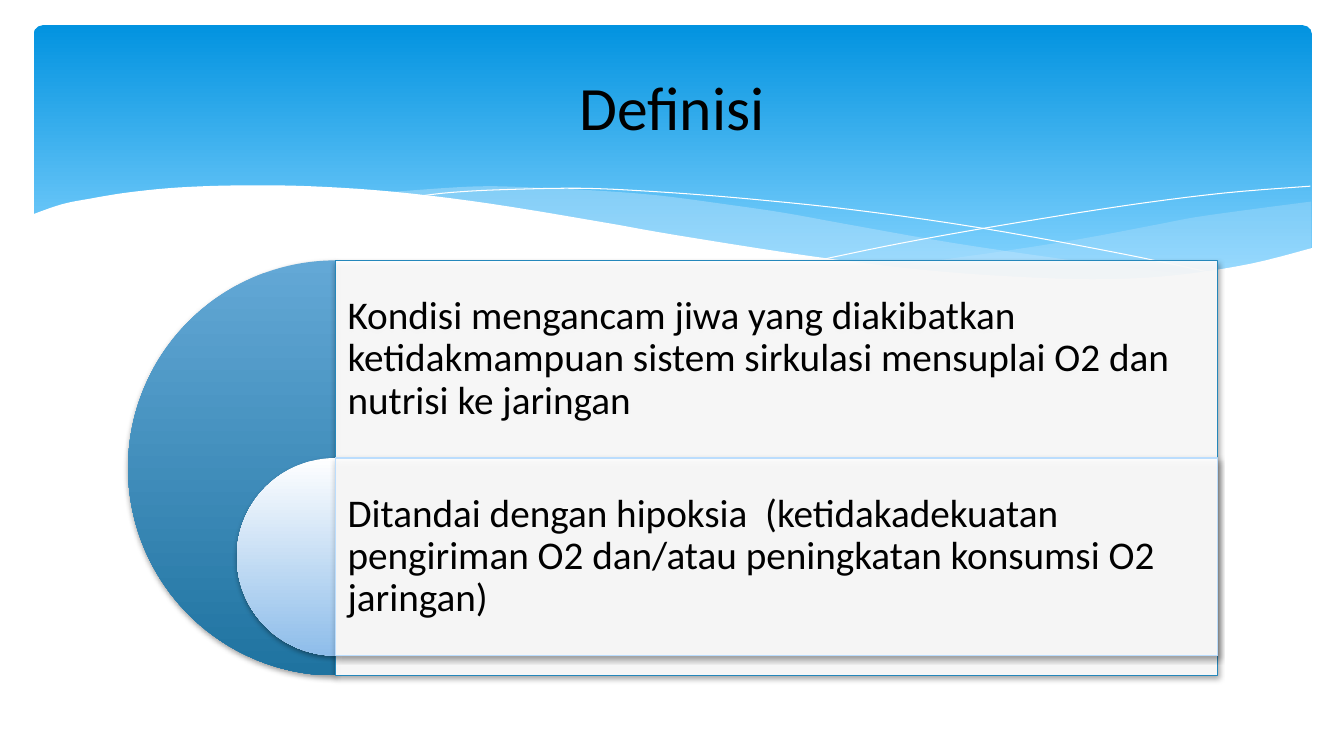
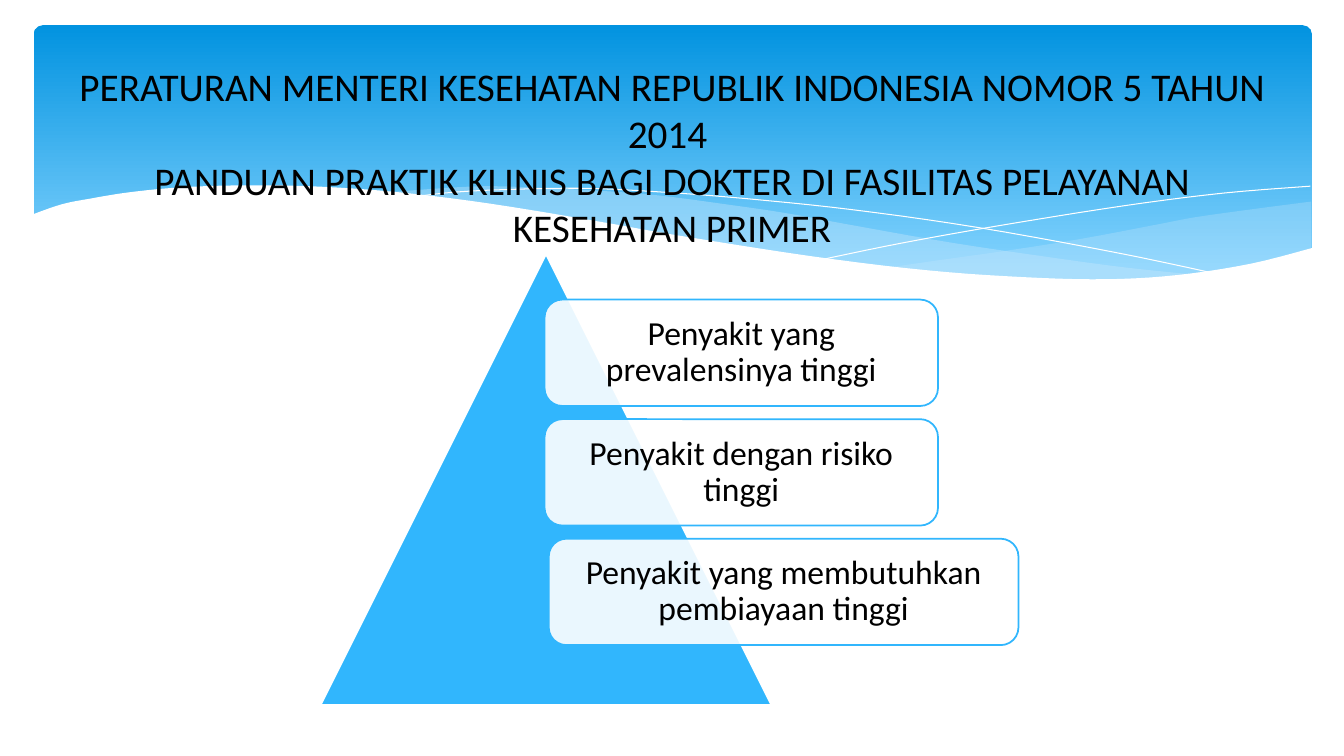
from itertools import pairwise
from typing import NamedTuple

from lxml.etree import SubElement
from pptx import Presentation
from pptx.dml.color import RGBColor
from pptx.enum.shapes import MSO_SHAPE
from pptx.enum.text import MSO_ANCHOR, MSO_AUTO_SIZE, PP_ALIGN
from pptx.oxml.ns import qn
from pptx.util import Pt

FONT = "Calibri"
BLACK = "000000"
WHITE = "FFFFFF"
SKY = "31B6FD"
MIST = "C6E7FC"
BAND_STOPS = ((0, "0293E0"), (0.9, "83D3FE"))

RIGHT_WAVE = (
    ((936.5, 144), (898, 149), (855, 155), (826, 160.5), (773, 170.5),
     (723, 178.5), (677, 185), (635, 191)),
    ((635, 191), (677, 195), (715, 198), (760, 199.5), (811, 199.5),
     (854, 196), (891, 189.5), (936.5, 178)),
)
MIDDLE_WAVE = (
    ((857, 196.5), (803.5, 191), (744.5, 183), (677.5, 173), (604, 160),
     (560, 152), (519, 146), (469.5, 139.5), (424, 136), (383, 134),
     (347, 133), (315, 134.5), (275, 137.5)),
    ((275, 137.5), (328, 143.5), (388, 152), (431, 160), (508, 173),
     (577.5, 183.5), (639, 191.5), (693, 197), (742, 199.5), (785, 200),
     (823, 199), (857, 196.5)),
)
FALLING_LINE = (
    ((296.5, 140.5), (322, 137.5), (359, 135.5), (415, 134.5), (469.5, 137),
     (534, 142), (610.5, 150), (698.5, 162.5), (797.5, 180.5), (871, 196)),
)
RISING_LINE = (
    ((589, 185), (645, 173.5), (718, 160.5), (803, 147), (873.5, 138),
     (936, 133)),
)
WHITE_WAVE = (
    ((938, 177), (893, 188.5), (841, 196.5), (790, 199.5), (731, 198),
     (661, 193), (579, 183), (483, 168), (429, 158.5), (350, 145.5),
     (281, 137), (220, 133), (169, 132.5), (127, 134), (91.5, 137.5),
     (64, 142), (44, 146), (22.5, 153.5)),
    ((22.5, 237), (938, 237)),
)


class Box(NamedTuple):
    """A rectangle in points."""
    left: float
    top: float
    width: float
    height: float


def color(hex_code):
    """Turn a hex string into a colour."""
    return RGBColor.from_string(hex_code)


def lengths(box):
    """Convert a box to lengths."""
    return [Pt(value) for value in box]


def paint_line(shape, line=None, width=0):
    """Set or hide the outline and drop the theme shadow."""
    shape.shadow.inherit = False
    if line:
        shape.line.color.rgb = color(line)
        shape.line.width = Pt(width)
    else:
        shape.line.fill.background()


def paint_solid(shape, fill, opacity=100):
    """Fill a shape with one colour at an opacity in percent."""
    shape.fill.solid()
    shape.fill.fore_color.rgb = color(fill)
    if opacity < 100:
        tint = shape.element.spPr.find(qn("a:solidFill")).find(qn("a:srgbClr"))
        SubElement(tint, qn("a:alpha"), val=str(opacity * 1000))


def paint_gradient(shape, stops):
    """Fill a shape with a gradient from top to bottom."""
    shape.fill.gradient()
    shape.fill.gradient_angle = 270
    for stop, (position, hex_code) in zip(shape.fill.gradient_stops, stops):
        stop.position = position
        stop.color.rgb = color(hex_code)


def cast_shadow(shape):
    """Add a soft shadow straight below a shape."""
    effects = shape.element.spPr.find(qn("a:effectLst"))
    shadow = SubElement(effects, qn("a:outerShdw"), blurRad=str(Pt(4)),
                        dist=str(Pt(2)), dir="5400000", rotWithShape="0")
    tint = SubElement(shadow, qn("a:srgbClr"), val=BLACK)
    SubElement(tint, qn("a:alpha"), val="38000")


def write(shape, text, size, align, spacing=1.0):
    """Set one paragraph of vertically centred text."""
    frame = shape.text_frame
    frame.text = text
    frame.word_wrap = True
    frame.auto_size = MSO_AUTO_SIZE.NONE
    frame.vertical_anchor = MSO_ANCHOR.MIDDLE
    para = frame.paragraphs[0]
    para.alignment = align
    para.line_spacing = spacing
    for span in para.runs:
        span.font.name = FONT
        span.font.size = Pt(size)
        span.font.color.rgb = color(BLACK)


def set_insets(shape, inset, bottom=None):
    """Set the text insets, with an optional deeper bottom one."""
    frame = shape.text_frame
    frame.margin_left = frame.margin_right = frame.margin_top = Pt(inset)
    frame.margin_bottom = Pt(inset if bottom is None else bottom)


def smooth(points, steps=5):
    """Interpolate a Catmull-Rom curve through the points."""
    if len(points) < 3:
        return list(points)
    padded = [points[0], *points, points[-1]]
    curve = [points[0]]
    for index, _ in enumerate(pairwise(points)):
        corners = padded[index:index + 4]
        for step in range(1, steps + 1):
            t = step / steps
            curve.append(tuple(
                0.5 * (2 * b + (c - a) * t + (2 * a - 5 * b + 4 * c - d) * t ** 2
                       + (3 * b - a - 3 * c + d) * t ** 3)
                for a, b, c, d in zip(*corners)))
    return curve


def add_curve(page, box, edges, closed):
    """Draw smooth edges one after another as a single outline."""
    points = [(Pt(box.left + x), Pt(box.top + y))
              for edge in edges for x, y in smooth(edge)]
    builder = page.shapes.build_freeform(*points[0])
    builder.add_line_segments(points[1:], close=closed)
    return builder.convert_to_shape()


def add_band(page, layout, box):
    """Draw the wavy header band and move it into the layout."""
    band = page.shapes.add_shape(
        MSO_SHAPE.ROUNDED_RECTANGLE,
        *lengths(Box(box.left + 24, box.top + 18, box.width - 47, 194.5)))
    band.adjustments[0] = 0.034
    paint_gradient(band, BAND_STOPS)
    paint_line(band)
    parts = [band]
    for edges, fill, opacity in ((RIGHT_WAVE, MIST, 29), (MIDDLE_WAVE, MIST, 40),
                                 (FALLING_LINE, None, 0), (RISING_LINE, None, 0),
                                 (WHITE_WAVE, WHITE, 100)):
        curve = add_curve(page, box, edges, closed=fill is not None)
        if fill:
            paint_solid(curve, fill, opacity)
            paint_line(curve)
        else:
            curve.fill.background()
            paint_line(curve, WHITE)
        parts.append(curve)
    for index, part in enumerate(parts):
        part.element.nvSpPr.cNvPr.set("id", str(100 + index))
        layout.element.cSld.spTree.insert(2 + index, part.element)


def set_title(page, text, size, box):
    """Place and format the title placeholder."""
    title = page.shapes.title
    title.left, title.top, title.width, title.height = lengths(box)
    write(title, text, size, PP_ALIGN.CENTER)


def add_nested_targets(page, box, layers):
    """Draw half discs of falling size, each with a panel on its right."""
    row = box.height * 0.476
    center = box.left + box.height / 2
    for index, (text, stops, line) in enumerate(layers):
        size = row if index else box.height
        top = box.top + index * row
        disc = page.shapes.add_shape(
            MSO_SHAPE.PIE, *lengths(Box(center - size / 2, top, size, size)))
        disc.adjustments[0], disc.adjustments[1] = 54, 162
        paint_gradient(disc, stops)
        paint_line(disc)
        panel = page.shapes.add_shape(
            MSO_SHAPE.RECTANGLE,
            *lengths(Box(center, top, box.left + box.width - center, size)))
        paint_solid(panel, WHITE, 90)
        paint_line(panel, line, 0.75)
        set_insets(panel, 8.6, size - row + 8.6)
        write(panel, text, 28, PP_ALIGN.LEFT, 0.9)
        for part in (disc, panel):
            cast_shadow(part)


def add_pyramid(page, box, labels):
    """Draw a triangle with a column of labels from its axis."""
    triangle = page.shapes.add_shape(MSO_SHAPE.ISOSCELES_TRIANGLE, *lengths(box))
    paint_solid(triangle, SKY)
    paint_line(triangle, WHITE, 1.25)
    for index, (text, shift, width) in enumerate(labels):
        spot = Box(box.left + box.width / 2 - 1 + shift,
                   box.top + 32.5 + index * 85.4, width, 76)
        label = page.shapes.add_shape(MSO_SHAPE.ROUNDED_RECTANGLE, *lengths(spot))
        paint_solid(label, WHITE, 90)
        paint_line(label, SKY, 1.25)
        set_insets(label, 11)
        write(label, text, 24, PP_ALIGN.CENTER, 0.9)


def main():
    """Build and save the deck."""
    deck = Presentation()
    deck.slide_width, deck.slide_height = Pt(960), Pt(540)
    layout = deck.slide_layouts[5]
    definition, regulation = [deck.slides.add_slide(layout) for _ in range(2)]
    add_band(definition, layout, Box(0, 0, 960, 540))

    set_title(definition, "Definisi", 44, Box(48, 26.5, 864, 98.5))
    add_nested_targets(definition, Box(91.5, 186, 778.5, 296.5), (
        ("Kondisi mengancam jiwa yang diakibatkan ketidakmampuan sistem "
         "sirkulasi mensuplai O2 dan nutrisi ke jaringan",
         ((0, "63A8D6"), (1, "1F73A0")), "2487BB"),
        ("Ditandai dengan hipoksia  (ketidakadekuatan pengiriman O2 dan/atau "
         "peningkatan konsumsi O2 jaringan)",
         ((0, WHITE), (1, "8EBDEA")), "BBDDFD"),
    ))

    set_title(regulation,
              "PERATURAN MENTERI KESEHATAN REPUBLIK INDONESIA NOMOR 5 TAHUN 2014 \v"
              "PANDUAN PRAKTIK KLINIS BAGI DOKTER DI FASILITAS PELAYANAN "
              "KESEHATAN PRIMER", 28, Box(48, 62.5, 864, 98.5))
    add_pyramid(regulation, Box(229, 181.5, 322, 322), (
        ("Penyakit yang prevalensinya tinggi", 0, 281),
        ("Penyakit dengan risiko tinggi", 0, 281),
        ("Penyakit yang membutuhkan pembiayaan tinggi", 3, 335.5),
    ))
    deck.save("out.pptx")


if __name__ == "__main__":
    main()
